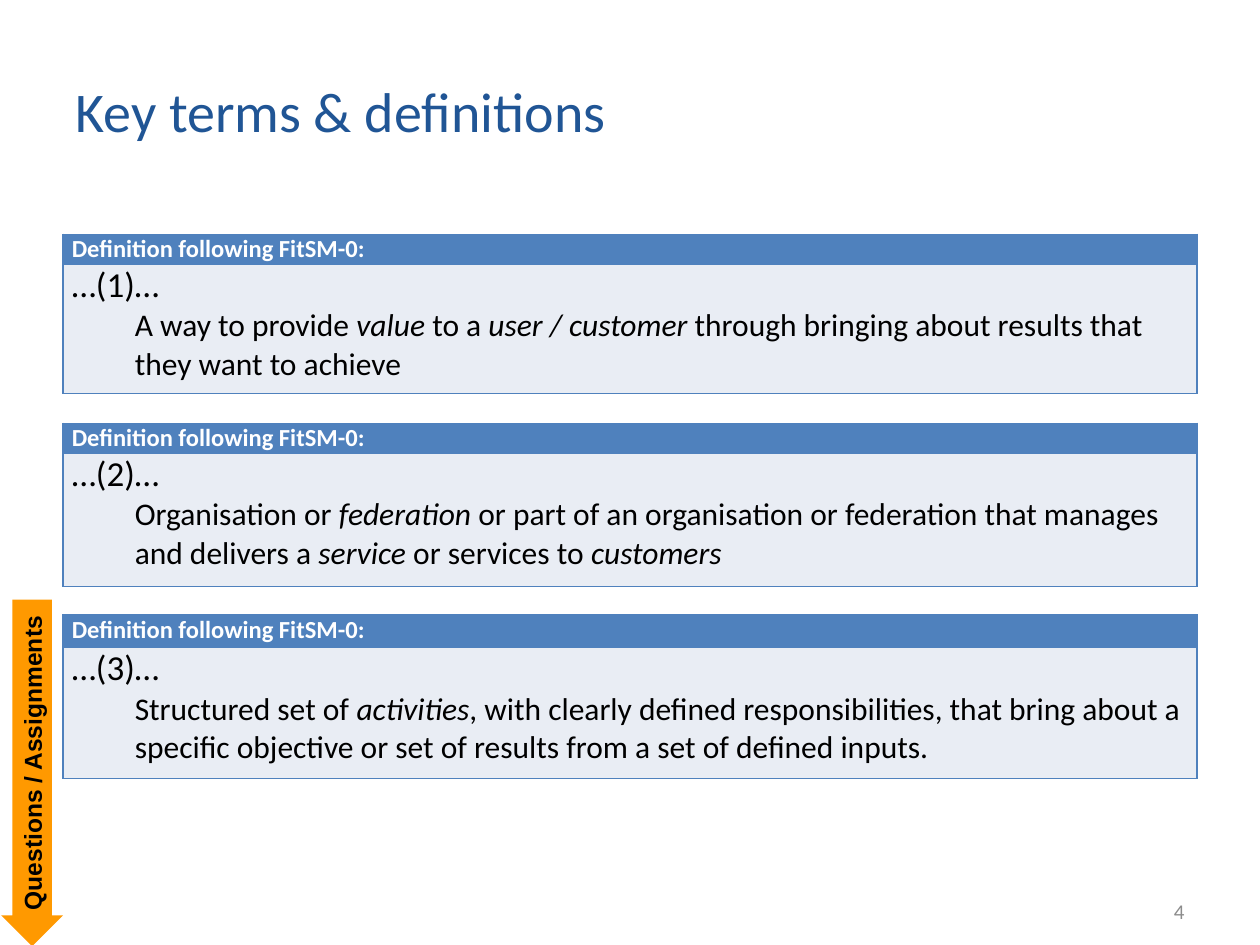
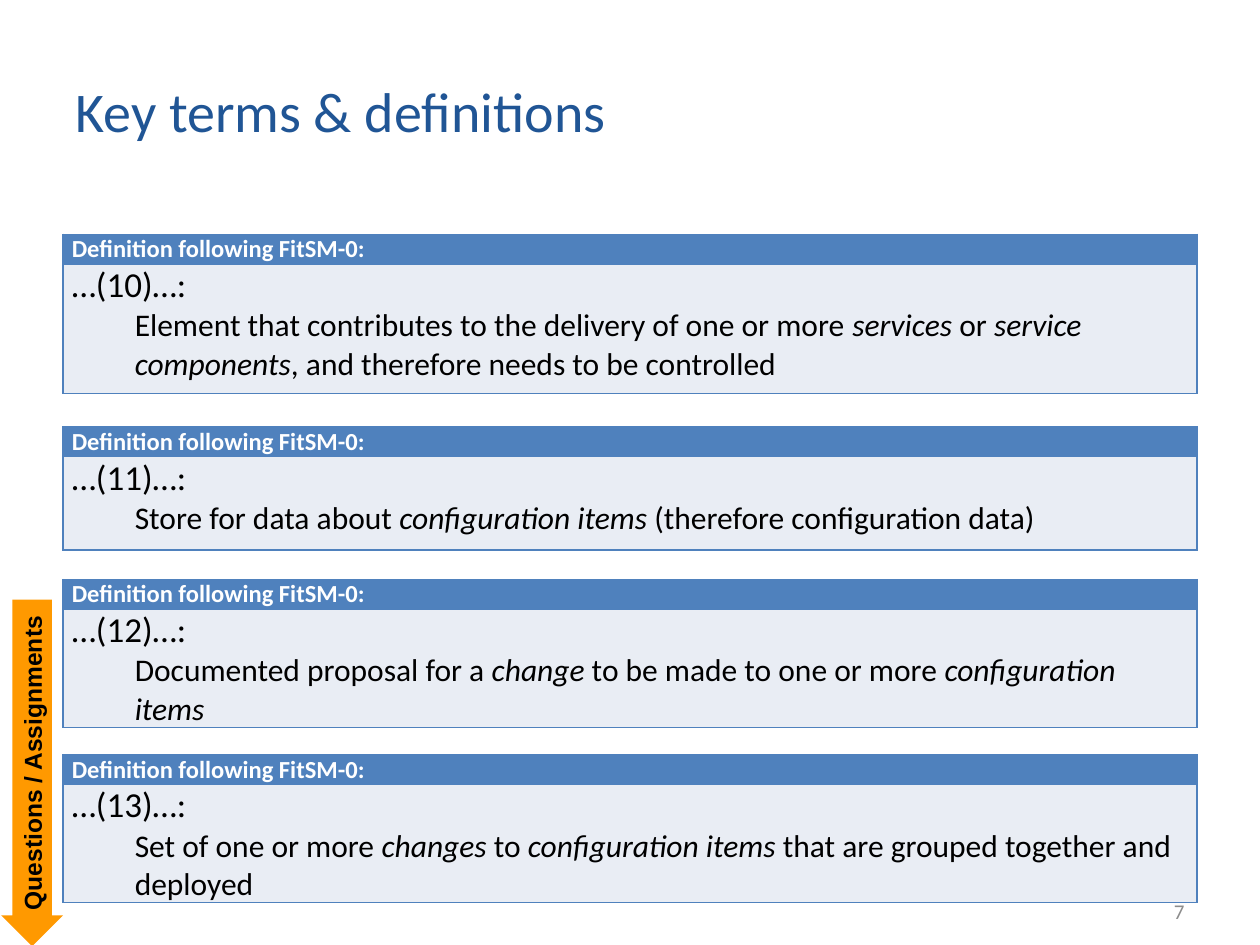
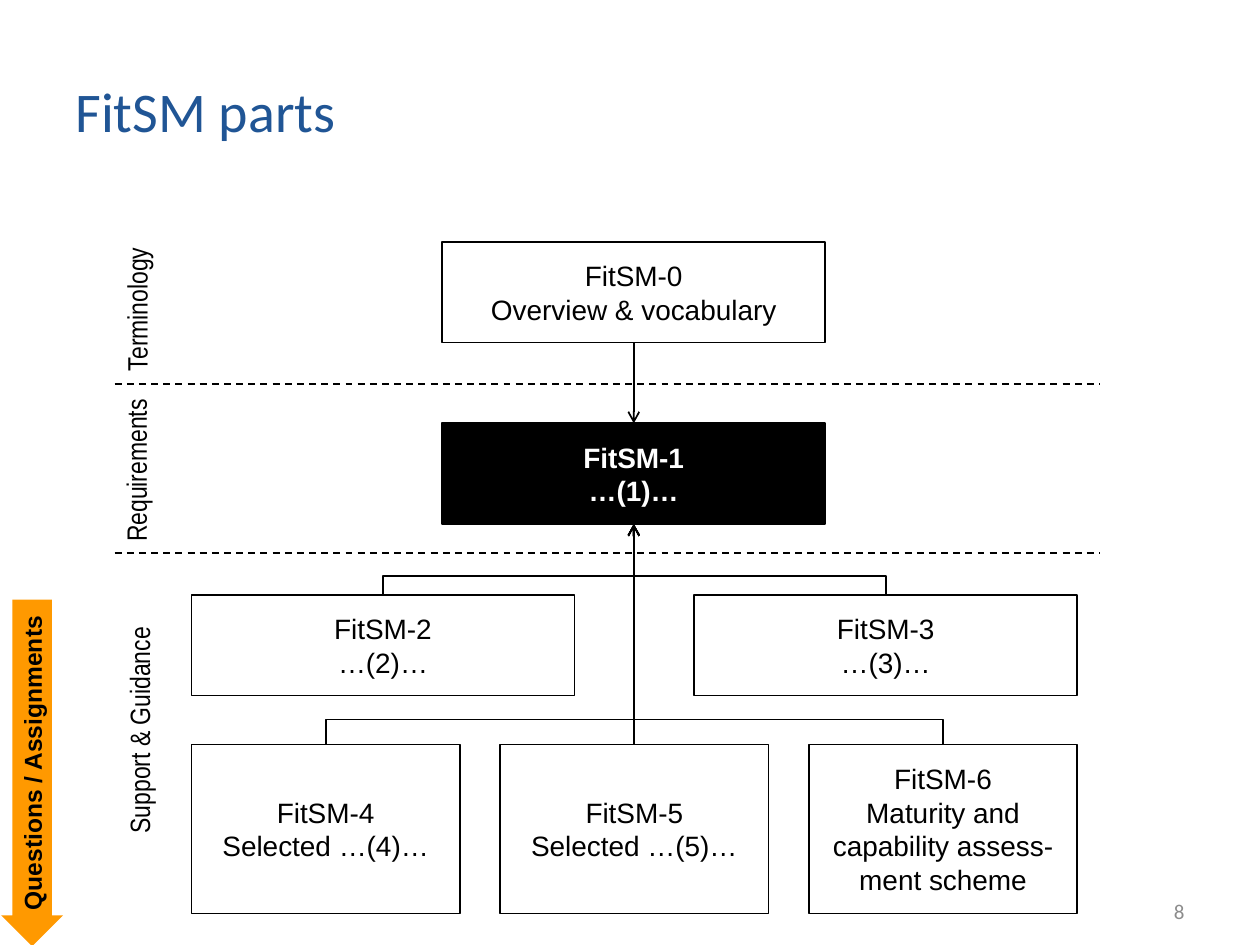
from pptx import Presentation
from pptx import util as u
from pptx.dml import color
from pptx.enum import dml, shapes, text
from pptx.oxml import ns, xmlchemy

COLORS = {
    "title": "205595", "number": "8C8C8C", "header": "4F81BD",
    "body": "E9EDF4", "arrow": "FF9900", "black": "000000", "white": "FFFFFF",
}
TITLE = {"name": "Calibri", "size": 32, "color": "title"}
NUMBER = {"name": "Calibri", "size": 12, "color": "number"}
HEADER = {"name": "Calibri", "size": 14, "color": "white", "bold": True}
TERM = {"name": "Calibri", "size": 20, "color": "black", "bold": False}
MEANING = {**TERM, "size": 18}
TAB = {"name": "Arial", "size": 14, "color": "black", "bold": True}
PART = {"name": "Arial", "size": 16, "color": "black"}
CORE_PART = {**PART, "color": "white", "bold": True}
LAYER = {"name": "Arial Narrow", "size": 16, "color": "black"}

LEFT, CENTER, RIGHT = (text.PP_ALIGN.LEFT, text.PP_ALIGN.CENTER,
                       text.PP_ALIGN.RIGHT)
MIDDLE, TOP = text.MSO_ANCHOR.MIDDLE, text.MSO_ANCHOR.TOP

# Text between asterisks is italic; each entry is top, height, term, meaning
SERVICE_TERMS = [
    (1.86, 1.26, "…(1)…",
     "A way to provide *value* to a *user / customer *through bringing about "
     "results that they want to achieve"),
    (3.36, 1.29, "…(2)…",
     "Organisation or *federation* or part of an organisation or federation "
     "that manages and delivers a *service* or services to *customers*"),
    (4.88, 1.3, "…(3)…",
     "Structured set of *activities*, with clearly defined responsibilities, "
     "that bring about a specific objective or set of results from a set of "
     "defined inputs."),
]
CONFIGURATION_TERMS = [
    (1.86, 1.26, "…(10)…:",
     "Element that contributes to the delivery of one or more *services* or "
     "*service components*, and therefore needs to be controlled"),
    (3.39, 0.97, "…(11)…:",
     "Store for data about *configuration items* (therefore configuration "
     "data)"),
    (4.6, 1.17, "…(12)…:",
     "Documented proposal for a *change* to be made to one or more "
     "*configuration items*"),
    (5.99, 1.17, "…(13)…:",
     "Set of one or more *changes *to *configuration items* that are grouped "
     "together and deployed"),
]


def rgb(name):
    return color.RGBColor.from_string(COLORS[name])


def inches(*values):
    return [u.Inches(value) for value in values]


def add_xml(parent, tag, **attributes):
    child = xmlchemy.OxmlElement(tag)
    for key, value in attributes.items():
        child.set(key, str(value))
    parent.append(child)
    return child


# Text
def style(font, formats):
    values = {**formats, "size": u.Pt(formats["size"])}
    font.color.rgb = rgb(values.pop("color"))
    for key, value in values.items():
        setattr(font, key, value)


def write(para, content, formats, align=LEFT):
    para.alignment = align
    for index, part in enumerate(content.split("*")):
        if part:
            span = para.add_run()
            span.text = part
            style(span.font, {**formats, "italic": index % 2 == 1})


def write_lines(frame, lines, formats, align=LEFT, anchor=MIDDLE, wrap=True):
    frame.word_wrap = wrap
    frame.vertical_anchor = anchor
    for index, line in enumerate(lines):
        para = frame.add_paragraph() if index else frame.paragraphs[0]
        write(para, line, formats, align)


def add_text(page, place, content, formats, **layout):
    box = page.shapes.add_textbox(*inches(*place))
    write_lines(box.text_frame, [content], formats, **layout)
    return box


# Shared parts of every slide
def add_page(deck, title, number):
    page = deck.slides.add_slide(deck.slide_layouts[6])
    add_text(page, (0.5, 0.3, 7.72, 1.15), title, TITLE)
    add_text(page, (7.17, 7.03, 2.33, 0.4), number, NUMBER, align=RIGHT)
    return page


def add_questions_arrow(page):
    arrow = page.shapes.add_shape(shapes.MSO_SHAPE.DOWN_ARROW,
                                  *inches(0.01, 4.76, 0.49, 2.75))
    arrow.adjustments[0], arrow.adjustments[1] = 0.64, 0.5
    arrow.shadow.inherit = False
    arrow.fill.solid()
    arrow.fill.fore_color.rgb = rgb("arrow")
    arrow.line.fill.background()
    frame = arrow.text_frame
    frame.margin_left = frame.margin_right = u.Inches(0.04)
    write_lines(frame, ["Questions / Assignments"], TAB, CENTER)
    frame._txBody.bodyPr.set("vert", "vert270")


# Definition tables
def format_cell(cell, fill):
    cell.margin_left = cell.margin_right = u.Inches(0.07)
    cell.margin_top = cell.margin_bottom = 0
    properties = cell._tc.get_or_add_tcPr()
    for side in "LRTB":
        border = add_xml(properties, f"a:ln{side}", w=u.Pt(1))
        add_xml(add_xml(border, "a:solidFill"), "a:srgbClr",
                val=COLORS["header"])
    cell.fill.solid()
    cell.fill.fore_color.rgb = rgb(fill)


def add_definition(page, top, height, term, meaning):
    table = page.shapes.add_table(2, 1, *inches(0.5, top, 9, height)).table
    table.first_row = table.horz_banding = False
    header_height = 0.26 if top == 4.88 else 0.23
    table.rows[0].height = u.Inches(header_height)
    table.rows[1].height = u.Inches(height - header_height)
    header, body = table.cell(0, 0), table.cell(1, 0)
    format_cell(header, "header")
    format_cell(body, "body")
    write(header.text_frame.paragraphs[0], "Definition following FitSM-0:",
          HEADER)
    write(body.text_frame.paragraphs[0], term, TERM)
    para = body.text_frame.add_paragraph()
    para.level = 1
    properties = para._p.get_or_add_pPr()
    properties.set("marL", str(u.Inches(0.5)))
    properties.set("indent", "0")
    write(para, meaning, MEANING)


def add_definition_page(deck, number, definitions):
    page = add_page(deck, "Key terms & definitions", number)
    for definition in definitions:
        add_definition(page, *definition)
    add_questions_arrow(page)


# Diagram of the parts
def add_part(page, place, *lines, core=False):
    box = page.shapes.add_shape(shapes.MSO_SHAPE.RECTANGLE, *inches(*place))
    box.shadow.inherit = False
    box.line.color.rgb = rgb("black")
    box.line.width = u.Pt(1)
    if core:
        box.fill.solid()
        box.fill.fore_color.rgb = rgb("black")
    else:
        box.fill.background()
    write_lines(box.text_frame, lines, CORE_PART if core else PART, CENTER)


def add_line(page, start, end, kind=shapes.MSO_CONNECTOR.STRAIGHT, arrow=True):
    line = page.shapes.add_connector(kind, *inches(*start, *end))
    add_xml(line._element.spPr, "a:effectLst")
    line.line.color.rgb = rgb("black")
    line.line.width = u.Pt(1)
    if arrow:
        add_xml(line.line._get_or_add_ln(), "a:tailEnd", type="arrow")
    else:
        line.line.dash_style = dml.MSO_LINE.DASH
    return line


def add_riser(page, start, end, bend):
    """Elbow that rises by bend, runs sideways, then rises to its end."""
    rise, run = start[1] - end[1], end[0] - start[0]
    mid_x, mid_y = (start[0] + end[0]) / 2, (start[1] + end[1]) / 2
    line = add_line(page, (mid_x - rise / 2, mid_y - run / 2),
                    (mid_x + rise / 2, mid_y + run / 2),
                    shapes.MSO_CONNECTOR.ELBOW)
    properties = line._element.spPr
    properties.find(ns.qn("a:xfrm")).set("rot", str(270 * 60000))
    geometry = properties.find(ns.qn("a:prstGeom"))
    guides = geometry.find(ns.qn("a:avLst"))
    if guides is None:
        guides = add_xml(geometry, "a:avLst")
    add_xml(guides, "a:gd", name="adj1",
            fmla=f"val {round(bend / rise * 100000)}")


def add_parts_page(deck):
    page = add_page(deck, "FitSM parts", "8")
    axis, core_bottom = 5.03, 4.16
    wide, narrow = (3.04, 0.8), (2.13, 1.34)
    pair_top, trio_top = 4.72, 5.91

    # Layers
    for y in (3.05, 4.39):
        add_line(page, (0.91, y), (8.73, y), arrow=False)
    for name, place in (("Terminology", (0.49, 2.27, 1.19, 0.37)),
                        ("Requirements", (0.41, 3.55, 1.34, 0.37)),
                        ("Support & Guidance", (0.18, 5.61, 1.85, 0.37))):
        label = add_text(page, place, name, LAYER, align=CENTER, anchor=TOP,
                         wrap=False)
        label.rotation = 270

    # Parts
    add_part(page, (3.51, 1.92, *wide), "FitSM-0", "Overview & vocabulary")
    add_part(page, (3.51, 3.36, *wide), "FitSM-1", "…(1)…", core=True)
    pair = ("…(2)…", "…(3)…")
    trio = ("Selected …(4)…", "Selected …(5)…",
            "Maturity and capability assess-ment scheme")
    for first, step, top, size, bend, captions in (
            (2, 3.99, pair_top, wide, 0.15, pair),
            (4, 2.45, trio_top, narrow, 0.2, trio)):
        for index, caption in enumerate(captions):
            left = 1.52 + index * step
            add_part(page, (left, top, *size), f"FitSM-{first + index}",
                     caption)
            center = left + size[0] / 2
            if abs(center - axis) > 0.1:
                add_riser(page, (center, top), (axis, core_bottom), bend)

    # Links along the axis
    add_line(page, (axis, 2.72), (axis, 3.36))
    add_line(page, (axis, trio_top), (axis, core_bottom))
    add_questions_arrow(page)


def main():
    deck = Presentation()
    deck.slide_width, deck.slide_height = inches(10, 7.5)
    add_definition_page(deck, "4", SERVICE_TERMS)
    add_definition_page(deck, "7", CONFIGURATION_TERMS)
    add_parts_page(deck)
    deck.save("out.pptx")


if __name__ == "__main__":
    main()
